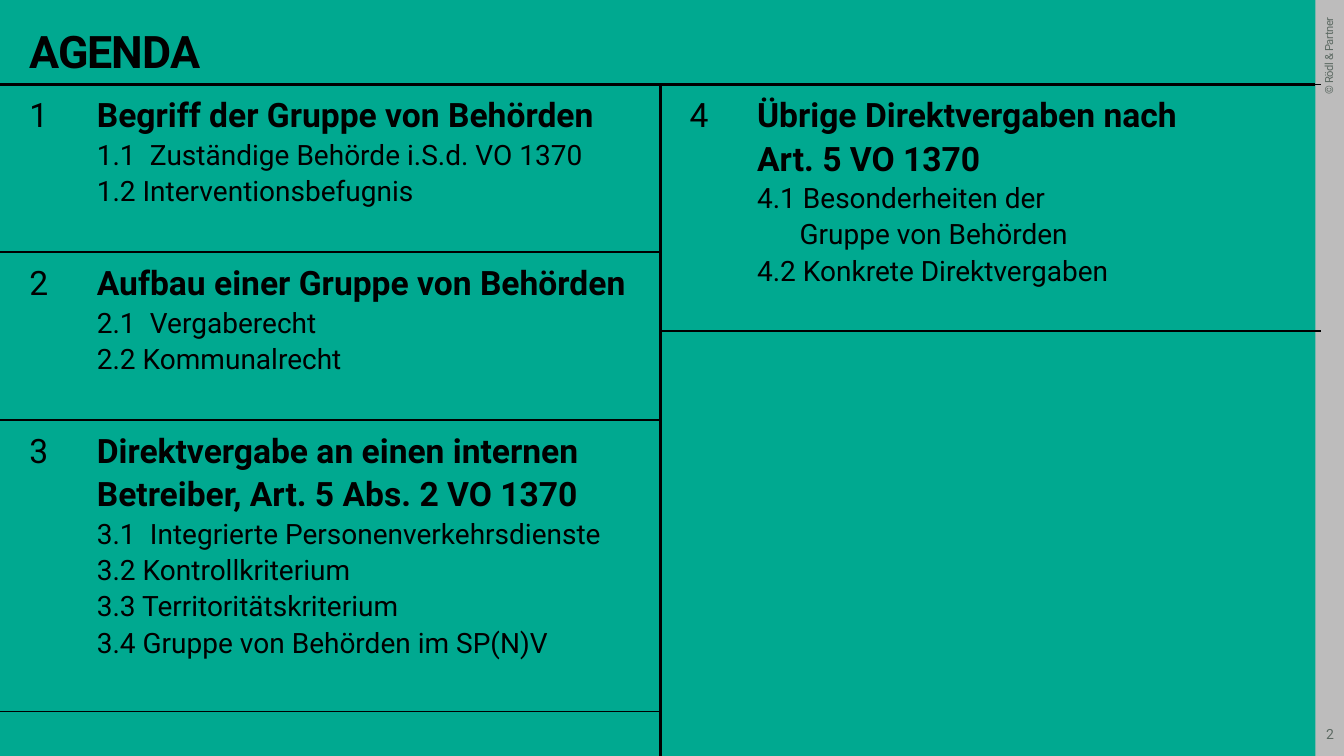
"""Build the agenda slide with two columns of numbered topics."""
from lxml import etree
from pptx import Presentation
from pptx.dml import color
from pptx.enum import shapes, text
from pptx.oxml import ns
from pptx.util import Cm, Pt

TITLE = "AGENDA"
CREDIT = "© Rödl & Partner"
PAGE = "2"
LEFT = [
    ("1", "Begriff der Gruppe von Behörden",
     ["1.1\tZuständige Behörde i.S.d. VO 1370", "1.2 Interventionsbefugnis"], 4.23),
    ("2", "Aufbau einer Gruppe von Behörden",
     ["2.1\tVergaberecht", "2.2 Kommunalrecht"], 4.23),
    ("3", "Direktvergabe an einen internen Betreiber, Art. 5 Abs. 2 VO 1370",
     ["3.1\tIntegrierte Personenverkehrsdienste", "3.2 Kontrollkriterium",
      "3.3 Territoritätskriterium", "3.4 Gruppe von Behörden im SP(N)V"], 7.34),
]
RIGHT = [
    ("4", "Übrige Direktvergaben nach\vArt. 5 VO 1370",
     ["4.1 Besonderheiten der\vGruppe von Behörden", "4.2 Konkrete Direktvergaben"], 6.22),
]
THEME = {
    "teal": "00A990", "grey": "BDBCBC", "ink": "000000",
    "title": {"size": 32, "bold": True, "ink": "000000", "space": -70},
    "head": {"size": 24, "bold": True, "ink": "000000"},
    "num": {"size": 24, "bold": False, "ink": "000000"},
    "item": {"size": 20, "bold": False, "ink": "000000"},
    "credit": {"size": 8, "bold": False, "ink": "5C6962", "space": -30},
    "page": {"size": 10, "bold": False, "ink": "5C6962"},
    "rule": 2.25, "grid": 1.5, "font": "Roboto",
}
WIDE, HIGH = 33.87, 19.05
TOP, MID, EDGE, BAR = 2.13, 16.64, 33.15, 0.74
COLS = (2.24, 14.4)
PAD, INSET = 0.2, 0.74
PLAIN = "{2D5ABB26-0587-4C30-8999-92F81FD0307C}"
SIDES = ("left", "top", "right", "bottom")


def rgb(code):
    return color.RGBColor.from_string(code)


def write(para, words, style, align=text.PP_ALIGN.LEFT):
    para.text = words
    para.alignment = align
    for run in para.runs:
        form = {"name": THEME["font"], "size": Pt(style["size"]), "bold": style["bold"]}
        for key, val in form.items():
            setattr(run.font, key, val)
        run.font.color.rgb = rgb(style["ink"])
        if "space" in style:
            run.font._element.set("spc", str(style["space"]))


def pad(obj, sizes):
    for side, size in zip(SIDES, sizes):
        setattr(obj, "margin_" + side, Cm(size))


def label(shape, words, style, align, pads=(0, 0, 0, 0), wrap=True):
    frame = shape.text_frame
    pad(frame, pads)
    form = {"word_wrap": wrap, "vertical_anchor": text.MSO_ANCHOR.MIDDLE,
            "auto_size": text.MSO_AUTO_SIZE.NONE}
    for key, val in form.items():
        setattr(frame, key, val)
    write(frame.paragraphs[0], words, style, align)


def rule(slide, *ends):
    line = slide.shapes.add_connector(shapes.MSO_CONNECTOR.STRAIGHT, *map(Cm, ends))
    line.line.width = Pt(THEME["rule"])
    line.line.color.rgb = rgb(THEME["ink"])
    etree.SubElement(line._element.spPr, ns.qn("a:effectLst"))


def border(cell, tag):
    edge = etree.SubElement(cell._tc.get_or_add_tcPr(), ns.qn(tag), w=str(Pt(THEME["grid"])))
    fill = etree.SubElement(edge, ns.qn("a:solidFill"))
    etree.SubElement(fill, ns.qn("a:srgbClr"), val=THEME["ink"])


def fill_cell(cell, lines, inset, tags):
    pad(cell, (inset, PAD, PAD, PAD))
    for tag in tags:
        border(cell, tag)
    cell.fill.background()
    frame = cell.text_frame
    for pos, (words, style) in enumerate(lines):
        para = frame.add_paragraph() if pos else frame.paragraphs[0]
        if style is THEME["item"]:
            hang = Cm(1.34 if "\t" in words else 1.07)
            props = para._p.get_or_add_pPr()
            props.set("marL", str(hang))
            props.set("indent", str(-hang))
        write(para, words, style)
        para.line_spacing = 1.1


def agenda(slide, topics, left):
    high = sum(topic[-1] for topic in topics)
    grid = slide.shapes.add_table(
        len(topics), 2, Cm(left), Cm(TOP), Cm(sum(COLS)), Cm(high)).table
    grid.first_row = grid.horz_banding = False
    grid._tbl.tblPr.find(ns.qn("a:tableStyleId")).text = PLAIN
    for col, wide in zip(grid.columns, COLS):
        col.width = Cm(wide)
    for pos, (num, head, items, tall) in enumerate(topics):
        grid.rows[pos].height = Cm(tall)
        tags = ["a:lnB"] if pos else ["a:lnT", "a:lnB"]
        body = [(head, THEME["head"])] + [(item, THEME["item"]) for item in items]
        fill_cell(grid.cell(pos, 0), [(num, THEME["num"])], INSET, tags)
        fill_cell(grid.cell(pos, 1), body, PAD, tags)


def main():
    deck = Presentation()
    deck.slide_width, deck.slide_height = Cm(WIDE), Cm(HIGH)
    slide = deck.slides.add_slide(deck.slide_layouts[5])
    back = slide.background.fill
    back.solid()
    back.fore_color.rgb = rgb(THEME["teal"])

    bar = slide.shapes.add_shape(
        shapes.MSO_SHAPE.RECTANGLE, Cm(EDGE), 0, Cm(WIDE - EDGE), Cm(HIGH))
    bar.shadow.inherit = False
    bar.fill.solid()
    bar.fill.fore_color.rgb = rgb(THEME["grey"])
    bar.line.fill.background()
    rule(slide, 0, TOP, EDGE, TOP)
    rule(slide, MID, TOP, MID, HIGH)

    title = slide.shapes.title
    for key, val in zip(("left", "top", "width", "height"), (INSET, 0.74, 31.7, 1.09)):
        setattr(title, key, Cm(val))
    label(title, TITLE, THEME["title"], text.PP_ALIGN.LEFT)

    note = slide.shapes.add_textbox(Cm(32.23), Cm(0.89), Cm(2.51), Cm(BAR))
    note.rotation = 270
    label(note, CREDIT, THEME["credit"], text.PP_ALIGN.RIGHT, (0, 0, 0.43, 0), False)
    page = slide.shapes.add_textbox(Cm(EDGE), Cm(17.93), Cm(BAR), Cm(1.12))
    label(page, PAGE, THEME["page"], text.PP_ALIGN.CENTER)

    agenda(slide, LEFT, 0)
    agenda(slide, RIGHT, MID)
    deck.save("out.pptx")


if __name__ == "__main__":
    main()
